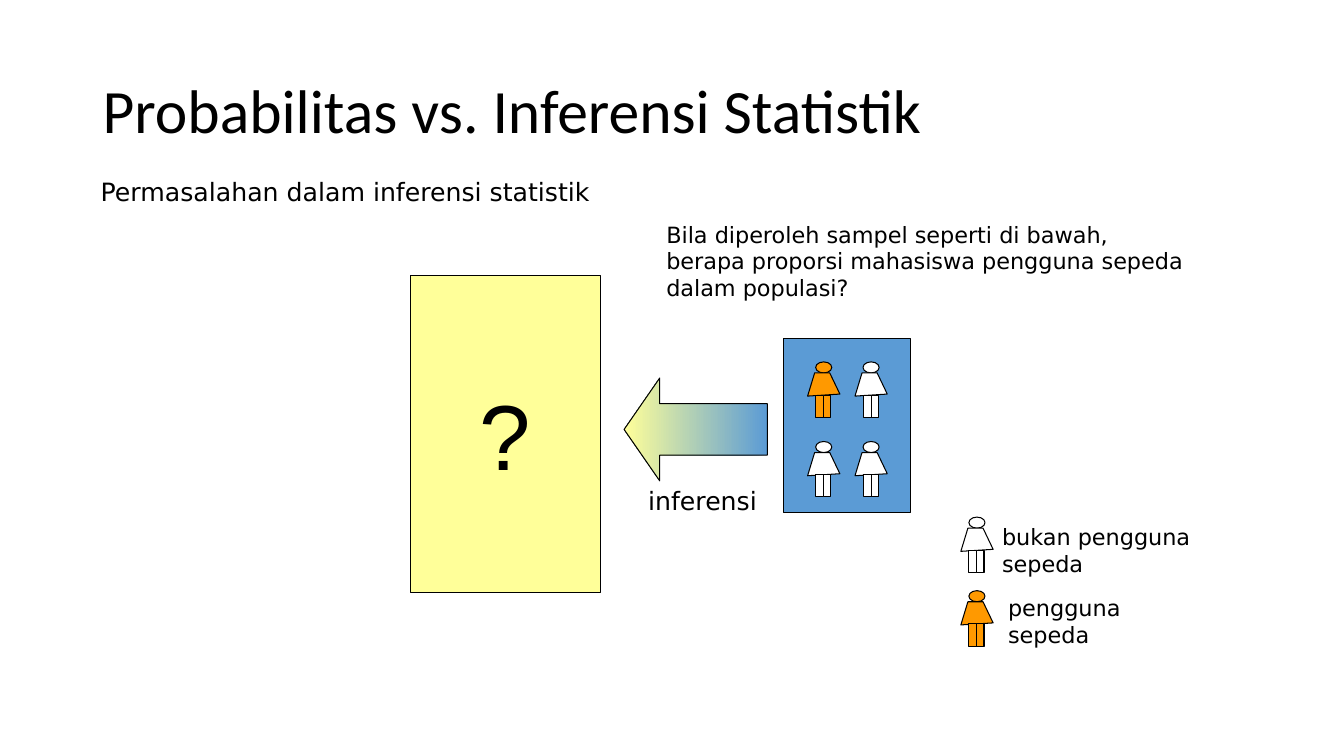
from pptx import Presentation
from pptx.dml.color import RGBColor
from pptx.enum.shapes import MSO_SHAPE
from pptx.enum.text import MSO_ANCHOR, MSO_AUTO_SIZE, PP_ALIGN
from pptx.util import Inches, Pt

COLORS = {
    "text": "000000",
    "outline": "000000",
    "population": "FFFF99",
    "sample": "5B9BD5",
    "cyclist": "FF9900",
    "other": "FFFFFF",
}


def rgb(name):
    """Return the named colour."""
    return RGBColor.from_string(COLORS[name])


def style(sp, fill=None):
    """Give a shape a thin outline, no shadow and an optional solid fill."""
    sp.shadow.inherit = False
    sp.line.color.rgb = rgb("outline")
    sp.line.width = Pt(0.75)
    if fill:
        sp.fill.solid()
        sp.fill.fore_color.rgb = rgb(fill)


def add_preset(shapes, kind, left, top, width, height, fill=None):
    """Add an outlined preset shape."""
    sp = shapes.add_shape(kind, Inches(left), Inches(top), Inches(width), Inches(height))
    style(sp, fill)
    return sp


def write(tf, lines, size, font):
    """Fill a text frame with one paragraph per line."""
    for i, line in enumerate(lines):
        p = tf.add_paragraph() if i else tf.paragraphs[0]
        p.text = line
        p.font.size = Pt(size)
        p.font.name = font
        p.font.color.rgb = rgb("text")


def add_text(s, lines, left, top, width, height, size=16, wrap=False):
    """Add a text box that grows with its lines."""
    tf = s.shapes.add_textbox(Inches(left), Inches(top), Inches(width), Inches(height)).text_frame
    tf.word_wrap = wrap
    tf.auto_size = MSO_AUTO_SIZE.SHAPE_TO_FIT_TEXT
    write(tf, lines, size, "DejaVu Sans")


def add_title(s, text):
    """Add the slide title."""
    tf = s.shapes.add_textbox(Inches(0.92), Inches(0.4), Inches(11.5), Inches(1.45)).text_frame
    tf.word_wrap = True
    tf.vertical_anchor = MSO_ANCHOR.MIDDLE
    write(tf, [text], 44, "Calibri")
    tf.paragraphs[0].line_spacing = 0.9


def add_population(s):
    """Add the unknown population with its question mark."""
    sp = add_preset(s.shapes, MSO_SHAPE.RECTANGLE, 4.07, 2.73, 1.89, 3.15, "population")
    tf = sp.text_frame
    tf.word_wrap = False
    tf.vertical_anchor = MSO_ANCHOR.MIDDLE
    write(tf, ["?"], 66, "Arial")
    tf.paragraphs[0].alignment = PP_ALIGN.CENTER


def add_inference_arrow(s):
    """Add the gradient arrow from sample to population."""
    sp = add_preset(s.shapes, MSO_SHAPE.RIGHT_ARROW, 6.19, 3.75, 1.42, 1.02)
    sp.rotation = 180
    sp.adjustments[0] = 0.5
    sp.adjustments[1] = 0.346
    sp.fill.gradient()
    sp.fill.gradient_angle = 0
    for stop, name in zip(sp.fill.gradient_stops, ("sample", "population")):
        stop.color.rgb = rgb(name)


def add_person(s, left, top, fill):
    """Add a grouped figure: head, dress and two legs."""
    shapes = s.shapes.add_group_shape().shapes
    add_preset(shapes, MSO_SHAPE.OVAL, left + 0.08, top, 0.16, 0.11, fill)
    outline = [(0.32, 0.32), (0.22, 0.11), (0.07, 0.11), (0, 0.34)]
    points = [(Inches(left + x), Inches(top + y)) for x, y in outline]
    builder = shapes.build_freeform(*points[0])
    builder.add_line_segments(points[1:], close=True)
    style(builder.convert_to_shape(), fill)
    for x in (0.15, 0.08):
        add_preset(shapes, MSO_SHAPE.RECTANGLE, left + x, top + 0.33, 0.08, 0.22, fill)


def add_sample(s):
    """Add the sample box with a grid of four people."""
    add_preset(s.shapes, MSO_SHAPE.RECTANGLE, 7.77, 3.36, 1.26, 1.73, "sample")
    for i, fill in enumerate(("cyclist", "other", "other", "other")):
        row, col = divmod(i, 2)
        add_person(s, 8.01 + col * 0.47, 3.59 + row * 0.79, fill)


def add_legend(s):
    """Add the key to the two kinds of people."""
    add_person(s, 9.53, 5.13, "other")
    add_text(s, ["bukan pengguna sepeda"], 9.84, 5.14, 2.13, 0.64, wrap=True)
    add_person(s, 9.53, 5.86, "cyclist")
    add_text(s, ["pengguna sepeda"], 9.9, 5.85, 1.72, 0.64, wrap=True)


def main():
    """Build and save the slide."""
    prs = Presentation()
    prs.slide_width, prs.slide_height = Inches(13.33), Inches(7.5)
    s = prs.slides.add_slide(prs.slide_layouts[6])
    add_title(s, "Probabilitas vs. Inferensi Statistik")
    add_text(s, ["Permasalahan dalam inferensi statistik"], 0.9, 1.7, 5.11, 0.4, size=18)
    question = [
        "Bila diperoleh sampel seperti di bawah,",
        "berapa proporsi mahasiswa pengguna sepeda",
        "dalam populasi?",
    ]
    add_text(s, question, 6.51, 2.14, 5.38, 0.91)
    add_population(s)
    add_inference_arrow(s)
    add_text(s, ["inferensi"], 6.33, 4.77, 1.28, 0.4, size=18)
    add_sample(s)
    add_legend(s)
    prs.save("out.pptx")


if __name__ == "__main__":
    main()
